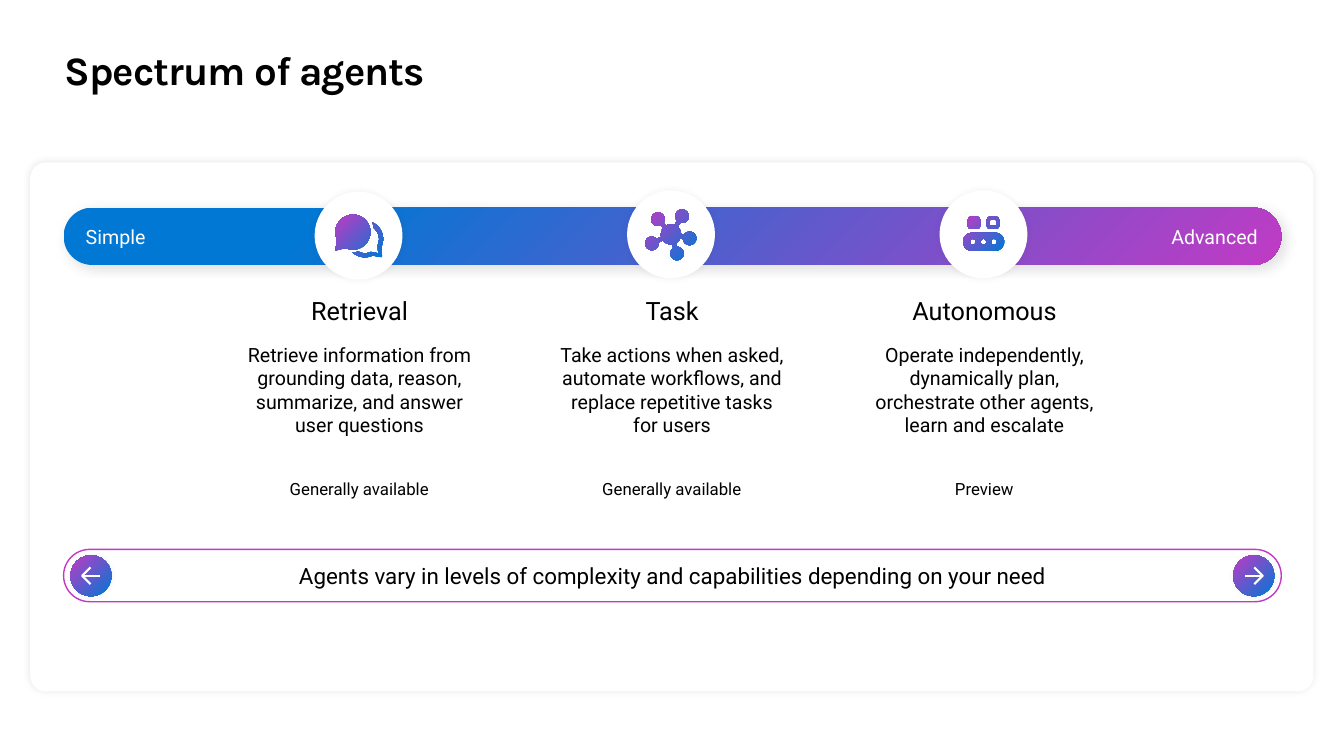
import math
from dataclasses import dataclass

from lxml import etree
from pptx import Presentation
from pptx import util as u
from pptx.dml import color
from pptx.enum import shapes, text
from pptx.oxml import ns

Point = tuple[float, float]
Contour = list[Point]

COLORS = {"ink": "000000", "paper": "FFFFFF", "magenta": "C03BC4", "blue": "0078D4"}
TOP_LEFT = (0, 0, 100, 100)
BOTTOM_RIGHT = (100, 100, 0, 0)
GLOW = (5, 5, 0, 0)
ROUND = shapes.MSO_SHAPE.ROUNDED_RECTANGLE
OVAL = shapes.MSO_SHAPE.OVAL
LEFT, CENTER, RIGHT = text.PP_ALIGN.LEFT, text.PP_ALIGN.CENTER, text.PP_ALIGN.RIGHT
TOP, MIDDLE = text.MSO_ANCHOR.TOP, text.MSO_ANCHOR.MIDDLE


@dataclass
class Box:
    left: float
    top: float
    width: float
    height: float


@dataclass
class Agent:
    name: str
    summary: str
    status: str
    badge_top: float
    icon: list[Contour]


@dataclass
class Label:
    words: str
    box: Box
    size: float
    tint: str
    align: int


def rgb(name: str) -> color.RGBColor:
    return color.RGBColor.from_string(COLORS[name])


def arc(x: float, y: float, radius: float, start: float, end: float) -> Contour:
    steps = max(4, round(abs(end - start) / 8))
    angles = [math.radians(start + (end - start) * i / steps) for i in range(steps + 1)]
    return [(x + radius * math.cos(a), y + radius * math.sin(a)) for a in angles]


def rounded(left: float, top: float, width: float, height: float, radius: float) -> Contour:
    right, bottom = left + width - radius, top + height - radius
    left, top = left + radius, top + radius
    corners = [(left, top), (right, top), (right, bottom), (left, bottom)]
    return [point for i, (x, y) in enumerate(corners)
            for point in arc(x, y, radius, 180 + 90 * i, 270 + 90 * i)]


def chat_icon() -> list[Contour]:
    bubble = arc(-4, -2.5, 12.5, 160, 475) + [(-16.2, 10.5)]
    x, y = 4.6, 2.5
    outer = arc(x, y, 13, -65, 25) + [(16.9, 15.5)] + arc(x, y, 13, 65, 132)
    inner = arc(x, y, 10.1, 117, 65) + [(14, 12.6)] + arc(x, y, 10.1, 25, -50)
    return [bubble, outer + inner]


def network_icon() -> list[Contour]:
    hub, node, half_spoke = 7.2, 4.8, 1.4
    hub_gap = math.degrees(math.asin(half_spoke / hub))
    node_gap = math.degrees(math.asin(half_spoke / node))
    nodes = [(-9.3, -10.8), (7.9, -12.9), (13.3, 2.9), (4.3, 13.7), (-13.7, 6.5)]
    angles = [math.degrees(math.atan2(y, x)) for x, y in nodes]
    outline = []
    for i, ((x, y), angle) in enumerate(zip(nodes, angles)):
        following = angle + (angles[(i + 1) % len(angles)] - angle) % 360
        outline += arc(x, y, node, angle - 180 + node_gap, angle + 180 - node_gap)
        outline += arc(0, 0, hub, angle + hub_gap, following - hub_gap)
    return [outline]


def robot_icon() -> list[Contour]:
    eyes = [rounded(x, -12.6, 8.8, 8.8, 2.5) for x in (-11.2, 2.4)]
    pupil = rounded(4.6, -10.4, 4.4, 4.4, 0.5)
    mouth = rounded(-14.6, -1.1, 29.4, 13, 6.5)
    dots = [arc(x, 5.4, 2.1, 0, 360) for x in (-7.5, 0, 7.5)]
    return [*eyes, pupil, mouth, *dots]


def add_shadow(shape, opacity: float, blur: float, distance: float, angle: float) -> None:
    effects = shape._element.spPr.find(ns.qn("a:effectLst"))
    shadow = etree.SubElement(effects, ns.qn("a:outerShdw"), blurRad=str(u.Pt(blur)),
                              dist=str(u.Pt(distance)), dir=str(angle * 60000),
                              algn="ctr", rotWithShape="0")
    tint = etree.SubElement(shadow, ns.qn("a:srgbClr"), val=COLORS["ink"])
    etree.SubElement(tint, ns.qn("a:alpha"), val=str(opacity * 1000))


def paint_gradient(shape, focus: tuple, end: float = 1) -> None:
    shape.fill.gradient()
    for stop, name, position in zip(shape.fill.gradient_stops, ("magenta", "blue"), (0, end)):
        stop.color.rgb = rgb(name)
        stop.position = position
    gradient = shape._element.spPr.find(ns.qn("a:gradFill"))
    linear = gradient.find(ns.qn("a:lin"))
    radial = etree.Element(ns.qn("a:path"), path="circle")
    etree.SubElement(radial, ns.qn("a:fillToRect"),
                     {side: str(part * 1000) for side, part in zip("ltrb", focus)})
    gradient.replace(linear, radial)


def add_panel(page, kind, box: Box, fill: str | None = "paper", corner: float = 0.5):
    shape = page.shapes.add_shape(kind, u.Pt(box.left), u.Pt(box.top),
                                  u.Pt(box.width), u.Pt(box.height))
    shape.shadow.inherit = False
    shape.line.fill.background()
    if kind == ROUND:
        shape.adjustments[0] = corner
    if fill:
        shape.fill.solid()
        shape.fill.fore_color.rgb = rgb(fill)
    else:
        shape.fill.background()
    return shape


def add_outline(page, contours: list[Contour], x: float, y: float, close: bool = True):
    placed = [[(u.Pt(x + a), u.Pt(y + b)) for a, b in contour] for contour in contours]
    builder = page.shapes.build_freeform(*placed[0][0], scale=1.0)
    for i, contour in enumerate(placed):
        if i:
            builder.move_to(*contour[0])
        builder.add_line_segments(contour[1:], close=close)
    shape = builder.convert_to_shape()
    shape.shadow.inherit = False
    shape.line.fill.background()
    return shape


def write(shape, lines: list[tuple[str, float]], tint: str = "ink", align: int = CENTER,
          anchor: int = MIDDLE, wrap: bool = True, after: float = 0, face: str = "Roboto") -> None:
    frame = shape.text_frame
    frame.margin_left = frame.margin_right = frame.margin_top = frame.margin_bottom = 0
    frame.word_wrap, frame.vertical_anchor = wrap, anchor
    for i, (words, size) in enumerate(lines):
        para = frame.add_paragraph() if i else frame.paragraphs[0]
        para.text, para.alignment, para.space_after = words, align, u.Pt(after)
        for span in para.runs:
            span.font.name, span.font.size = face, u.Pt(size)
            span.font.color.rgb = rgb(tint)


def add_text(page, box: Box):
    return page.shapes.add_textbox(u.Pt(box.left), u.Pt(box.top), u.Pt(box.width), u.Pt(box.height))


def add_title(page) -> None:
    title = add_text(page, Box(46.2, 36, 867.6, 38.9))
    write(title, [("Spectrum of agents", 28.8)], align=LEFT, anchor=TOP, face="Karla")
    para = title.text_frame.paragraphs[0]
    para.line_spacing = 0.9
    span = para.runs[0]
    span.font.bold = True
    span._r.get_or_add_rPr().set("spc", "-70")


def add_agent(page, agent: Agent, center: float) -> None:
    badge = 62.8
    circle = add_panel(page, OVAL, Box(center - badge / 2, agent.badge_top, badge, badge))
    add_shadow(circle, *GLOW)
    paint_gradient(add_outline(page, agent.icon, center, agent.badge_top + badge / 2), TOP_LEFT)
    summary = add_text(page, Box(center - 82.4, 211, 166.3, 101.5))
    write(summary, [(agent.name, 18), (agent.summary, 14)], anchor=TOP, after=12)
    status = add_panel(page, ROUND, Box(center - 61.7, 336.2, 124.6, 26.6))
    write(status, [(agent.status, 12)], wrap=False)


def add_arrow_button(page, center: float, direction: int) -> None:
    size, middle = 29.4, 411.3
    button = add_panel(page, OVAL, Box(center - size / 2, middle - size / 2, size, size))
    add_shadow(button, *GLOW)
    paint_gradient(button, TOP_LEFT)
    tip = 6.3 * direction
    neck = tip - 6 * direction
    arrow = add_outline(page, [[(-tip, 0), (tip, 0)], [(neck, -6), (tip, 0), (neck, 6)]],
                        center, middle, close=False)
    arrow.fill.background()
    arrow.line.color.rgb = rgb("paper")
    arrow.line.width = u.Pt(1.5)


AGENTS = [
    Agent("Retrieval", "Retrieve information from grounding data, reason, summarize, and answer user questions",
          "Generally available", 136.9, chat_icon()),
    Agent("Task", "Take actions when asked, automate workflows, and replace repetitive tasks\nfor users",
          "Generally available", 136, network_icon()),
    Agent("Autonomous", "Operate independently, dynamically plan, orchestrate other agents, learn and escalate",
          "Preview", 136, robot_icon()),
]
LABELS = [
    Label("Simple", Box(61.2, 160.6, 121, 17.3), 14, "paper", LEFT),
    Label("Advanced", Box(802, 160.6, 96.5, 17.3), 14, "paper", RIGHT),
]


def main() -> None:
    deck = Presentation()
    deck.slide_width, deck.slide_height = u.Pt(960), u.Pt(540)
    page = deck.slides.add_slide(deck.slide_layouts[6])
    add_title(page)
    add_shadow(add_panel(page, ROUND, Box(21.6, 115.9, 916.6, 378), corner=0.03), 10, 5, 0, 0)
    spectrum = add_panel(page, ROUND, Box(45.4, 148.3, 869.8, 41))
    paint_gradient(spectrum, BOTTOM_RIGHT, 0.8)
    add_shadow(spectrum, 11, 7, 3, 45)
    for i, agent in enumerate(AGENTS):
        add_agent(page, agent, 256.1 + 223.2 * i)
    for label in LABELS:
        write(add_text(page, label.box), [(label.words, label.size)], label.tint, label.align)
    banner = add_panel(page, ROUND, Box(45.4, 392.4, 869.8, 37.4), fill=None)
    banner.line.color.rgb = rgb("magenta")
    banner.line.width = u.Pt(1)
    write(banner, [("Agents vary in levels of complexity and capabilities depending on your need", 16)])
    for center, direction in ((65, -1), (895.6, 1)):
        add_arrow_button(page, center, direction)
    deck.save("out.pptx")


if __name__ == "__main__":
    main()
